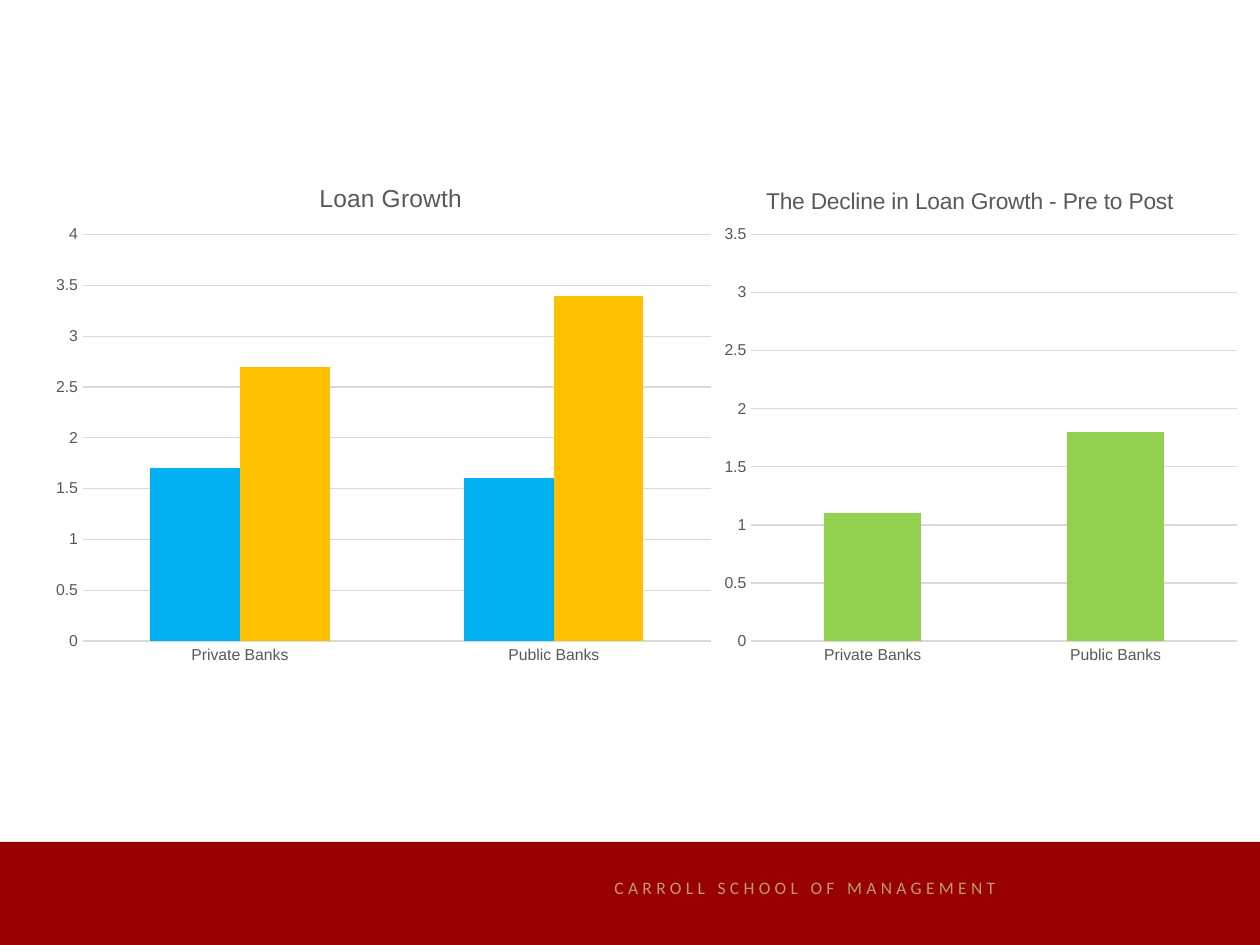
from lxml import etree
from pptx import Presentation
from pptx.chart.data import CategoryChartData
from pptx.dml.color import RGBColor
from pptx.enum.chart import XL_CHART_TYPE, XL_TICK_MARK
from pptx.enum.shapes import MSO_SHAPE
from pptx.oxml.ns import qn
from pptx.util import Pt

MAROON = RGBColor(0x99, 0x00, 0x00)
GOLD = RGBColor(0xBC, 0x9B, 0x6A)
GREY = RGBColor(0x59, 0x59, 0x59)
GRID = RGBColor(0xD9, 0xD9, 0xD9)
BLUE = RGBColor(0x00, 0xB0, 0xF0)
AMBER = RGBColor(0xFF, 0xC0, 0x00)
GREEN = RGBColor(0x92, 0xD0, 0x50)

BANKS = ("Private Banks", "Public Banks")


def set_font(font, color, **formats):
    for name, value in formats.items():
        setattr(font, name, value)
    font.color.rgb = color


def set_layout(parent, position, **fractions):
    """Place a chart part by fractions of the chart's width and height."""
    for old in parent.findall(qn("c:layout")):
        parent.remove(old)
    layout = etree.Element(qn("c:layout"))
    manual = etree.SubElement(layout, qn("c:manualLayout"))
    if "w" in fractions:
        etree.SubElement(manual, qn("c:layoutTarget")).set("val", "inner")
    for mode in ("xMode", "yMode"):
        etree.SubElement(manual, qn(f"c:{mode}")).set("val", "edge")
    for name, value in fractions.items():
        etree.SubElement(manual, qn(f"c:{name}")).set("val", str(value))
    parent.insert(position, layout)


def add_bank_chart(page, box, title, title_size, title_place, plot_place, maximum, series):
    data = CategoryChartData()
    data.categories = BANKS
    for number, (values, _) in enumerate(series, 1):
        data.add_series(f"Series {number}", values)
    chart = page.shapes.add_chart(
        XL_CHART_TYPE.COLUMN_CLUSTERED, *map(Pt, box), data).chart
    chart.has_legend = False
    set_font(chart.font, GREY, name="Arial", size=Pt(10))

    # Title
    chart.has_title = True
    para = chart.chart_title.text_frame.paragraphs[0]
    span = para.add_run()
    span.text = title
    set_font(span.font, GREY, name="Arial", size=Pt(title_size), bold=False)
    title_element = chart.element.find(".//" + qn("c:title"))
    set_layout(title_element, 1, **title_place)

    # Axes and grid
    for axis in (chart.category_axis, chart.value_axis):
        axis.major_tick_mark = axis.minor_tick_mark = XL_TICK_MARK.NONE
        axis.format.line.fill.background()
        set_font(axis.tick_labels.font, GREY, name="Arial", size=Pt(9))
    scale = chart.value_axis
    for name, value in dict(minimum_scale=0, maximum_scale=maximum,
                            major_unit=0.5, has_major_gridlines=True).items():
        setattr(scale, name, value)
    scale.tick_labels.number_format = "General"
    scale.tick_labels.number_format_is_linked = False
    scale.major_gridlines.format.line.color.rgb = GRID
    scale.major_gridlines.format.line.width = Pt(0.75)

    # Columns
    plot = chart.plots[0]
    for name, value in dict(gap_width=150, overlap=0, vary_by_categories=False).items():
        setattr(plot, name, value)
    for columns, (_, color) in zip(plot.series, series):
        columns.format.fill.solid()
        columns.format.fill.fore_color.rgb = color
    set_layout(chart.element.find(".//" + qn("c:plotArea")), 0, **plot_place)


def add_footer(page, box):
    left, top, width, height = box
    band = page.shapes.add_shape(MSO_SHAPE.RECTANGLE, *map(Pt, box))
    band.shadow.inherit = False
    band.fill.solid()
    band.fill.fore_color.rgb = MAROON
    band.line.fill.background()

    # School name
    label = page.shapes.add_textbox(Pt(left + 344), Pt(top + 16.5), Pt(254), Pt(19.5))
    label.text_frame.word_wrap = False
    span = label.text_frame.paragraphs[0].add_run()
    span.text = "CARROLL SCHOOL OF MANAGEMENT"
    set_font(span.font, GOLD, name="Calibri", size=Pt(10))
    span.font._element.set("spc", "250")


def main():
    deck = Presentation()
    deck.slide_width, deck.slide_height = Pt(720), Pt(540)
    page = deck.slides.add_slide(deck.slide_layouts[6])
    add_footer(page, (0, 481, 720, 60))
    add_bank_chart(
        page, (24, 90, 390, 294), "Loan Growth", 14, dict(x=0.4, y=0.04),
        dict(x=0.06, y=0.15, w=0.92, h=0.79), 4,
        [((1.7, 1.6), BLUE), ((2.7, 3.4), AMBER)])
    add_bank_chart(
        page, (408, 90, 305, 294), "The Decline in Loan Growth - Pre to Post", 13,
        dict(x=0.09, y=0.05), dict(x=0.07, y=0.15, w=0.91, h=0.79), 3.5,
        [((1.1, 1.8), GREEN)])
    deck.save("out.pptx")


if __name__ == "__main__":
    main()
